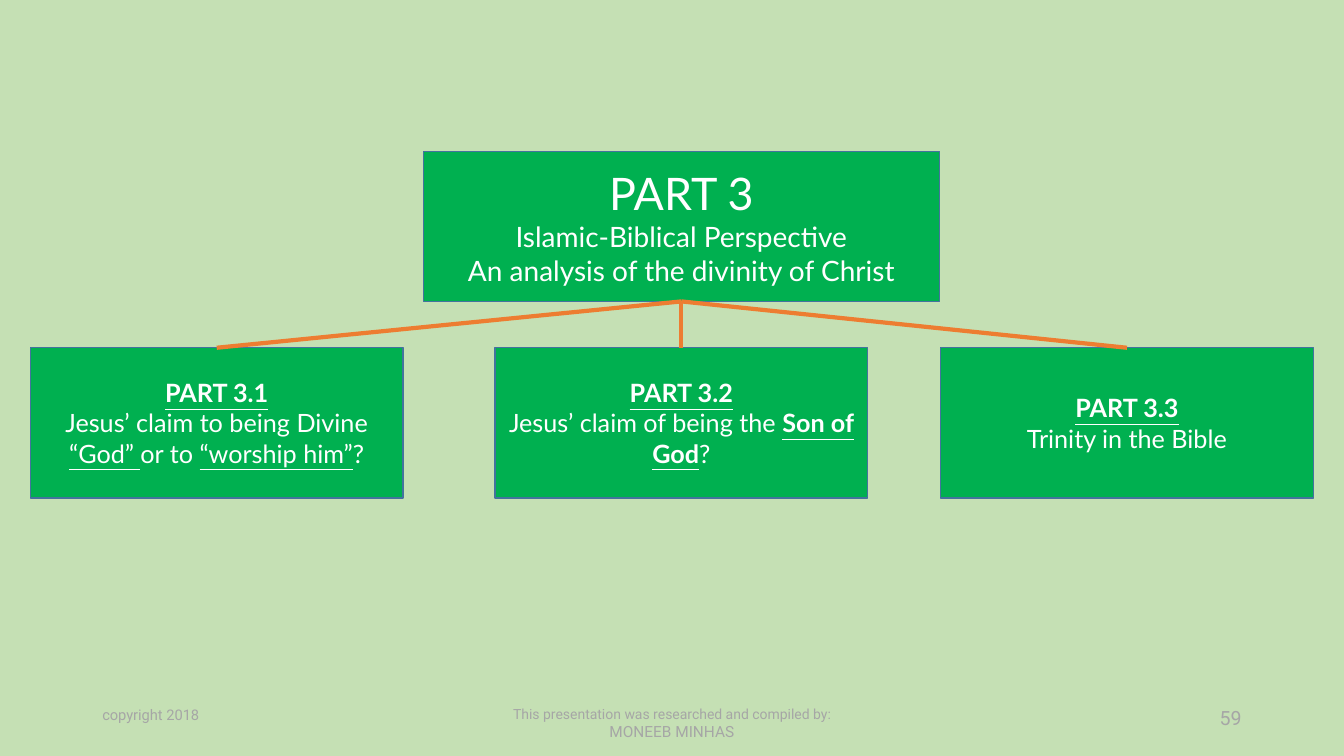
from dataclasses import dataclass

import pptx
import pptx.dml.color
import pptx.enum.shapes
import pptx.enum.text
import pptx.oxml
import pptx.oxml.ns
import pptx.util

Pt = pptx.util.Pt
ALIGN = pptx.enum.text.PP_ALIGN
ANCHOR = pptx.enum.text.MSO_ANCHOR


@dataclass(frozen=True)
class Theme:
    background: str = "C5E0B4"
    box: str = "00B050"
    border: str = "43739E"
    branch: str = "ED7D31"
    box_text: str = "FFFFFF"
    footer_text: str = "A6A6A6"
    box_font: str = "Lato"
    footer_font: str = "Roboto"
    heading: float = 32
    subheading: float = 20
    body: float = 18
    page_number: float = 14
    author: float = 11
    copyright: float = 10.5
    credit: float = 10


THEME = Theme()
BOX_HEIGHT = 107.3
CHILD_TOP = 248.4
CHILD_WIDTH = 266.4
FOOTER_TOP = 500.4
FOOTER_HEIGHT = 28.8

KEY = {"bold": True, "underline": True}
UNDERLINED = {"underline": True}

# Left edge and paragraphs; each paragraph is a list of (text, format) runs.
CHILDREN = [
    (21.6, [
        [("PART 3.1", KEY)],
        [("Jesus’ claim to being Divine ", {}), ("“God” ", UNDERLINED),
         ("or to ", {}), ("“worship him”", UNDERLINED), ("?", {})],
    ]),
    (353.5, [
        [("PART 3.2", KEY)],
        [("Jesus’ claim of being the ", {}), ("Son of God", KEY), ("?", {})],
    ]),
    (671.8, [
        [("PART 3.3", KEY)],
        [("Trinity in the Bible", {})],
    ]),
]


def rgb(value):
    return pptx.dml.color.RGBColor.from_string(value)


def add_run(p, text, *, size, font, color, bold=False, underline=False):
    r = p.add_run()
    r.text = text
    r.font.size = Pt(size)
    r.font.name = font
    r.font.color.rgb = rgb(color)
    r.font.bold = bold
    r.font.underline = underline


def fill_text(tf, paragraphs, align, anchor, **base):
    """Write paragraphs of (text, format) runs; each format overrides base."""
    tf.word_wrap = True
    tf.vertical_anchor = anchor
    for i, runs in enumerate(paragraphs):
        p = tf.add_paragraph() if i else tf.paragraphs[0]
        p.alignment = align
        for text, fmt in runs:
            add_run(p, text, **{**base, **fmt})


def add_box(slide, left, top, width, paragraphs):
    sp = slide.shapes.add_shape(
        pptx.enum.shapes.MSO_SHAPE.RECTANGLE,
        Pt(left), Pt(top), Pt(width), Pt(BOX_HEIGHT))
    sp.shadow.inherit = False
    sp.fill.solid()
    sp.fill.fore_color.rgb = rgb(THEME.box)
    sp.line.color.rgb = rgb(THEME.border)
    sp.line.width = Pt(1)
    fill_text(sp.text_frame, paragraphs, ALIGN.CENTER, ANCHOR.MIDDLE,
              size=THEME.body, font=THEME.box_font, color=THEME.box_text)
    return sp


def add_branch(slide, parent, child):
    """Join the bottom centre of parent to the top centre of child."""
    line = slide.shapes.add_connector(
        pptx.enum.shapes.MSO_CONNECTOR.STRAIGHT, 0, 0, 0, 0)
    line.begin_connect(parent, 2)
    line.end_connect(child, 0)
    line.line.color.rgb = rgb(THEME.branch)
    line.line.width = Pt(3)
    effects = pptx.oxml.parse_xml(
        f"<a:effectLst {pptx.oxml.ns.nsdecls('a')}/>")
    line._element.spPr.append(effects)


def add_footer(slide, left, width, align, paragraphs):
    sp = slide.shapes.add_textbox(
        Pt(left), Pt(FOOTER_TOP), Pt(width), Pt(FOOTER_HEIGHT))
    fill_text(sp.text_frame, paragraphs, align, ANCHOR.TOP,
              size=THEME.copyright, font=THEME.footer_font,
              color=THEME.footer_text)


def main():
    prs = pptx.Presentation()
    prs.slide_width, prs.slide_height = Pt(960), Pt(540)
    slide = prs.slides.add_slide(prs.slide_layouts[6])
    slide.background.fill.solid()
    slide.background.fill.fore_color.rgb = rgb(THEME.background)

    subheading = {"size": THEME.subheading}
    root = add_box(slide, 302.4, 108, 368.6, [
        [("PART 3", {"size": THEME.heading})],
        [("Islamic-Biblical Perspective", subheading)],
        [("An analysis of the divinity of Christ", subheading)],
    ])
    children = [add_box(slide, left, CHILD_TOP, CHILD_WIDTH, paragraphs)
                for left, paragraphs in CHILDREN]
    for child in children:
        add_branch(slide, root, child)

    add_footer(slide, 678, 216, ALIGN.RIGHT,
               [[("59", {"size": THEME.page_number})]])
    add_footer(slide, 318, 324, ALIGN.CENTER, [
        [("This presentation was researched and compiled by:",
          {"size": THEME.credit})],
        [("MONEEB MINHAS", {"size": THEME.author})],
    ])
    add_footer(slide, 66, 216, ALIGN.LEFT, [[("copyright 2018", {})]])
    prs.save("out.pptx")


if __name__ == "__main__":
    main()
